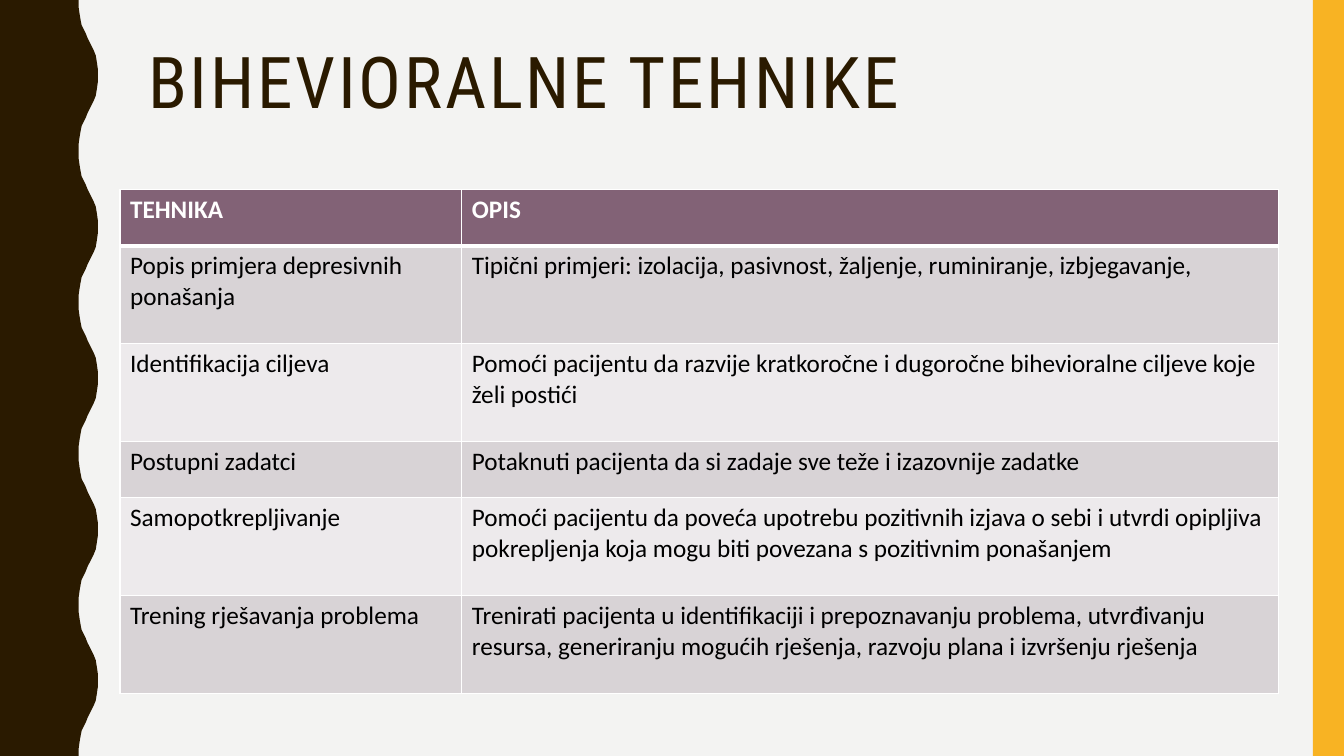
from lxml import etree
from pptx import Presentation
from pptx.dml.color import RGBColor
from pptx.enum.shapes import MSO_SHAPE
from pptx.oxml.ns import qn
from pptx.util import Pt

PX = 9144  # EMU per px, 100 px to the inch
WIDTH, HEIGHT = 1333, 750
BROWN, YELLOW, PLUM, WHITE = "2A1A00", "F8B323", "826276", "FFFFFF"
BANDS = ["D8D3D6", "EDEAEC"]


def color(hex_code):
    return RGBColor.from_string(hex_code)


def write(frame, text, size=18, font="Calibri", ink="000000", bold=False, tracking=0, leading=1.0):
    """Put one formatted paragraph in a text frame; tracking is in points."""
    frame.word_wrap = True
    paragraph = frame.paragraphs[0]
    paragraph.line_spacing = leading
    run = paragraph.add_run()
    run.text = text
    run.font.size = Pt(size)
    run.font.name = font
    run.font.bold = bold
    run.font.color.rgb = color(ink)
    if tracking:
        run.font._element.set("spc", str(tracking * 100))


deck = Presentation()
deck.slide_width, deck.slide_height = WIDTH * PX, HEIGHT * PX
slide = deck.slides.add_slide(deck.slide_layouts[6])
slide.background.fill.solid()
slide.background.fill.fore_color.rgb = color("F3F3F2")

# Wavy left edge: a rising half wave, its mirror, repeated down the slide
PERIOD = 150
rise = [(78, 0), (78, 7), (79, 14), (80, 20), (81, 25), (83, 29), (85, 33),
        (87, 38), (89, 42), (91, 46), (93, 50), (95, 55), (96, 61), (97, 68)]
fall = [(x, PERIOD - y) for x, y in reversed(rise)]
wave = rise + [(97, PERIOD // 2)] + fall
edge = [(x, top + y) for top in range(0, HEIGHT, PERIOD) for x, y in wave]
outline = slide.shapes.build_freeform(0, 0, scale=PX)
outline.add_line_segments(edge + [(0, HEIGHT)], close=True)
wavy_band = outline.convert_to_shape()

right_bar = slide.shapes.add_shape(MSO_SHAPE.RECTANGLE, 1302 * PX, 0, 31 * PX, HEIGHT * PX)
for band, fill in [(wavy_band, BROWN), (right_bar, YELLOW)]:
    band.shadow.inherit = False
    band.fill.solid()
    band.fill.fore_color.rgb = color(fill)
    band.line.fill.background()

title = slide.shapes.add_textbox(137 * PX, 42 * PX, 1113 * PX, 163 * PX)
write(title.text_frame, "BIHEVIORALNE TEHNIKE", size=51, font="Roboto Condensed",
      ink=BROWN, tracking=2, leading=0.9)

techniques = [
    ("TEHNIKA", "OPIS"),
    ("Popis primjera depresivnih ponašanja",
     "Tipični primjeri: izolacija, pasivnost, žaljenje, ruminiranje, izbjegavanje,"),
    ("Identifikacija ciljeva",
     "Pomoći pacijentu da razvije kratkoročne i dugoročne bihevioralne ciljeve koje želi postići"),
    ("Postupni zadatci",
     "Potaknuti pacijenta da si zadaje sve teže i izazovnije zadatke"),
    ("Samopotkrepljivanje",
     "Pomoći pacijentu da poveća upotrebu pozitivnih izjava o sebi i utvrdi opipljiva "
     "pokrepljenja koja mogu biti povezana s pozitivnim ponašanjem"),
    ("Trening rješavanja problema",
     "Trenirati pacijenta u identifikaciji i prepoznavanju problema, utvrđivanju resursa, "
     "generiranju mogućih rješenja, razvoju plana i izvršenju rješenja"),
]
column_widths = [339, 810]
row_heights = [56, 97, 97, 56, 97, 97]
table = slide.shapes.add_table(len(techniques), 2, 119 * PX, 188 * PX,
                               sum(column_widths) * PX, sum(row_heights) * PX).table
for column, width in zip(table.columns, column_widths):
    column.width = width * PX

for r, (row, height, texts) in enumerate(zip(table.rows, row_heights, techniques)):
    row.height = height * PX
    header = r == 0
    borders = {"lnL": 1, "lnR": 1, "lnT": 3 if r == 1 else 1, "lnB": 3 if header else 1}
    for cell, text in zip(row.cells, texts):
        write(cell.text_frame, text, ink=WHITE if header else "000000", bold=header)
        cell.fill.solid()
        cell.fill.fore_color.rgb = color(PLUM if header else BANDS[(r - 1) % 2])
        properties = cell._tc.get_or_add_tcPr()
        for position, (side, points) in enumerate(borders.items()):
            border = etree.Element(qn(f"a:{side}"), w=str(Pt(points)))
            solid = etree.SubElement(border, qn("a:solidFill"))
            etree.SubElement(solid, qn("a:srgbClr"), val=WHITE)
            properties.insert(position, border)

deck.save("out.pptx")
